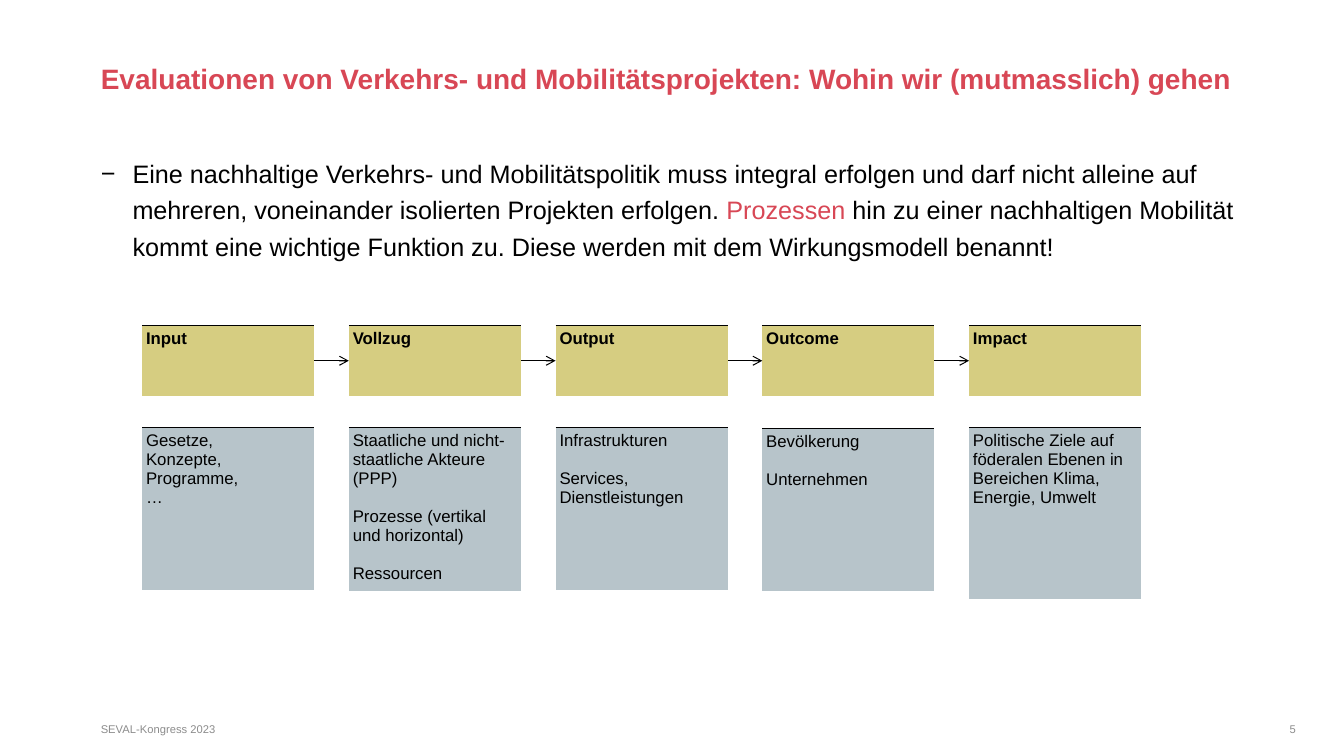
from lxml.etree import SubElement
from pptx import Presentation
from pptx.dml.color import RGBColor
from pptx.enum.shapes import MSO_CONNECTOR
from pptx.enum.text import MSO_ANCHOR, MSO_AUTO_SIZE, PP_ALIGN
from pptx.oxml.ns import qn
from pptx.util import Cm, Pt

COLORS = {
    "red": "D84755",
    "black": "000000",
    "grey": "8C8C8C",
    "stage": "D6CD81",
    "detail": "B7C4CA",
}
FONT = "Arial"

# Grid of the impact model, in centimetres
LEFT, PITCH, WIDTH = 3.58, 5.21, 4.34
STAGE_TOP, STAGE_HEIGHT = 8.2, 1.78

# Stage, detail paragraphs, gap between them (pt), detail top and height (cm)
STAGES = [
    ("Input", ["Gesetze,", "Konzepte,", "Programme,", "…"], 0, 10.77, 4.09),
    ("Vollzug", ["Staatliche und nicht-staatliche Akteure (PPP)",
                 "Prozesse (vertikal und horizontal)", "Ressourcen"], 13.8, 10.77, 4.09),
    ("Output", ["Infrastrukturen", "Services, Dienstleistungen"], 13.8, 10.77, 4.09),
    ("Outcome", ["Bevölkerung", "Unternehmen"], 13.8, 10.8, 4.09),
    ("Impact", ["Politische Ziele auf föderalen Ebenen in Bereichen Klima, Energie, Umwelt"],
     0, 10.77, 4.32),
]


def color(name):
    return RGBColor.from_string(COLORS[name])


def format_paragraph(paragraph, size, color_name, bold=False, align=PP_ALIGN.LEFT):
    paragraph.alignment = align
    font = paragraph.font
    font.name, font.size, font.bold = FONT, Pt(size), bold
    font.color.rgb = color(color_name)


def prepare_frame(shape, left, top, width, height):
    """Place a shape and return its text frame without margins."""
    shape.left, shape.top, shape.width, shape.height = map(Cm, (left, top, width, height))
    frame = shape.text_frame
    frame.margin_left = frame.margin_right = frame.margin_top = frame.margin_bottom = 0
    frame.word_wrap = True
    frame.auto_size = MSO_AUTO_SIZE.NONE
    frame.vertical_anchor = MSO_ANCHOR.TOP
    return frame


def fill_title(slide):
    frame = prepare_frame(slide.shapes.title, 2.54, 1.65, 30.12, 2.18)
    frame.text = "Evaluationen von Verkehrs- und Mobilitätsprojekten: Wohin wir (mutmasslich) gehen"
    paragraph = frame.paragraphs[0]
    paragraph.line_spacing = 0.9
    format_paragraph(paragraph, 20, "red", bold=True)


def fill_body(slide):
    frame = prepare_frame(slide.placeholders[1], 2.54, 3.84, 30.12, 13.33)
    paragraph = frame.paragraphs[0]
    paragraph.line_spacing = 1.2
    paragraph.space_before = Pt(0)
    properties = paragraph._p.get_or_add_pPr()
    properties.set("marL", str(Cm(0.8)))
    properties.set("indent", str(Cm(-0.8)))
    SubElement(properties, qn("a:buChar"), char="−")
    format_paragraph(paragraph, 18, "black")
    for text, color_name in [
        ("Eine nachhaltige Verkehrs- und Mobilitätspolitik muss integral erfolgen und darf nicht "
         "alleine auf mehreren, voneinander isolierten Projekten erfolgen. ", "black"),
        ("Prozessen", "red"),
        (" hin zu einer nachhaltigen Mobilität kommt eine wichtige Funktion zu. "
         "Diese werden mit dem Wirkungsmodell benannt!", "black"),
    ]:
        run = paragraph.add_run()
        run.text = text
        run.font.color.rgb = color(color_name)


def add_footer(slide, text, left, width, align):
    box = slide.shapes.add_textbox(0, 0, 0, 0)
    frame = prepare_frame(box, left, 18.21, width, 0.66)
    frame.text = text
    format_paragraph(frame.paragraphs[0], 8, "grey", align=align)


def set_borders(cell):
    """Black line on top, nothing on the other sides."""
    properties = cell._tc.get_or_add_tcPr()
    for side in ("lnL", "lnR", "lnT", "lnB"):
        line = SubElement(properties, qn(f"a:{side}"), w=str(Pt(0.75)))
        if side == "lnT":
            fill = SubElement(line, qn("a:solidFill"))
            SubElement(fill, qn("a:srgbClr"), val=COLORS["black"])
        else:
            SubElement(line, qn("a:noFill"))


def add_cell_table(slide, texts, left, top, height, fill, gap=0, bold=False):
    frame = slide.shapes.add_table(1, 1, Cm(left), Cm(top), Cm(WIDTH), Cm(height))
    table = frame.table
    table.first_row = table.horz_banding = False
    cell = table.cell(0, 0)
    set_borders(cell)
    cell.fill.solid()
    cell.fill.fore_color.rgb = color(fill)
    cell.margin_left = cell.margin_right = cell.margin_top = Cm(0.1)
    cell.margin_bottom = Cm(0.2)
    cell.text = "\n".join(texts)
    for index, paragraph in enumerate(cell.text_frame.paragraphs):
        paragraph.space_before = Pt(gap if index else 0)
        format_paragraph(paragraph, 12, "black", bold)


def add_arrow(slide, start, end, y):
    arrow = slide.shapes.add_connector(MSO_CONNECTOR.STRAIGHT, Cm(start), Cm(y), Cm(end), Cm(y))
    arrow.line.color.rgb = color("black")
    arrow.line.width = Pt(0.75)
    properties = arrow._element.spPr
    SubElement(properties.find(qn("a:ln")), qn("a:tailEnd"), type="arrow")
    SubElement(properties, qn("a:effectLst"))


def main():
    presentation = Presentation()
    presentation.slide_width, presentation.slide_height = Cm(33.87), Cm(19.05)
    slide = presentation.slides.add_slide(presentation.slide_layouts[1])

    # Title, statement and footer
    fill_title(slide)
    fill_body(slide)
    add_footer(slide, "SEVAL-Kongress 2023", 2.54, 18.62, PP_ALIGN.LEFT)
    add_footer(slide, "5", 24.46, 8.2, PP_ALIGN.RIGHT)

    # Impact model: stages with details, joined by arrows
    for index, (stage, details, gap, top, height) in enumerate(STAGES):
        left = LEFT + index * PITCH
        add_cell_table(slide, [stage], left, STAGE_TOP, STAGE_HEIGHT, "stage", bold=True)
        add_cell_table(slide, details, left, top, height, "detail", gap)
        if index:
            add_arrow(slide, left - PITCH + WIDTH, left, STAGE_TOP + STAGE_HEIGHT / 2)

    presentation.save("out.pptx")


if __name__ == "__main__":
    main()
